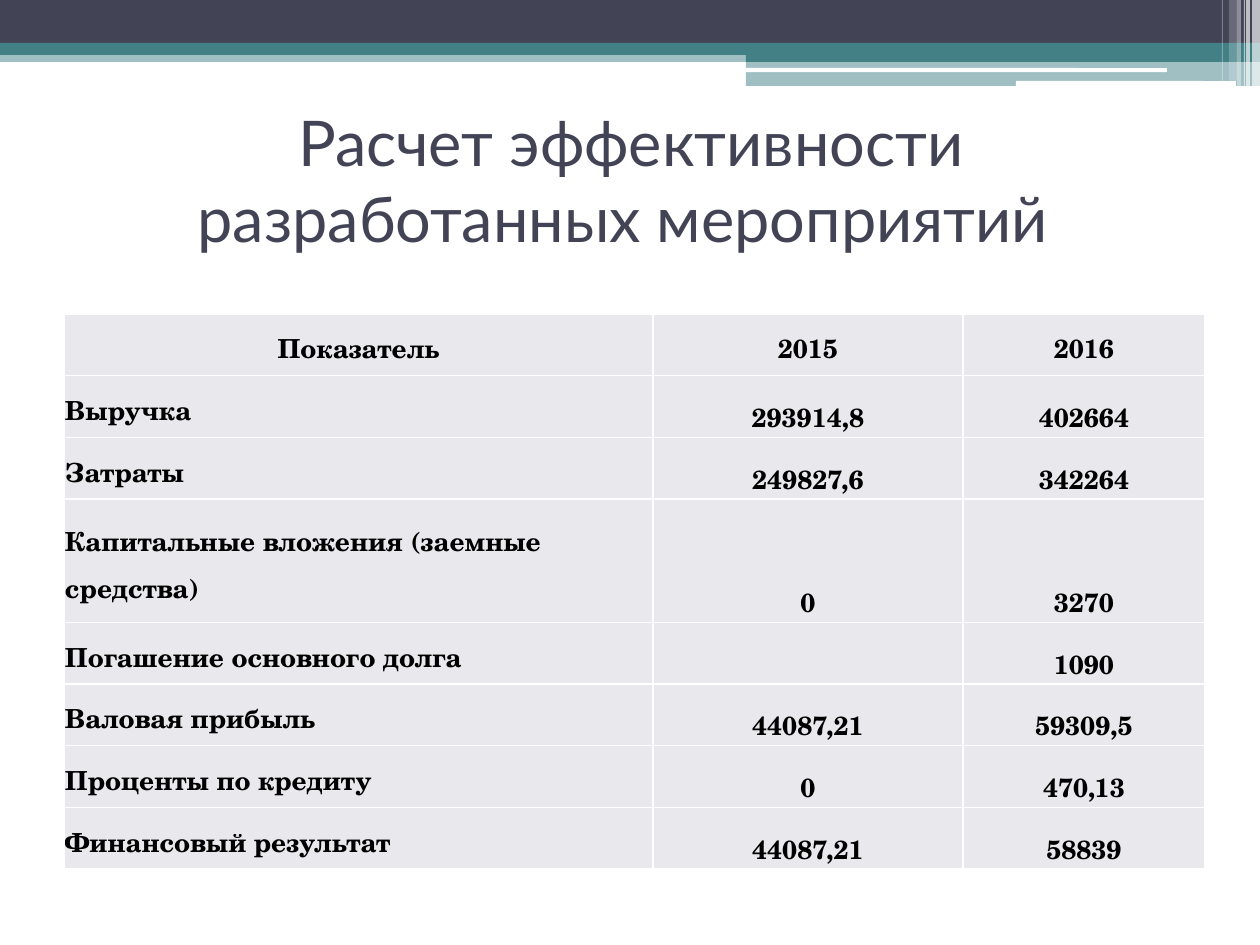
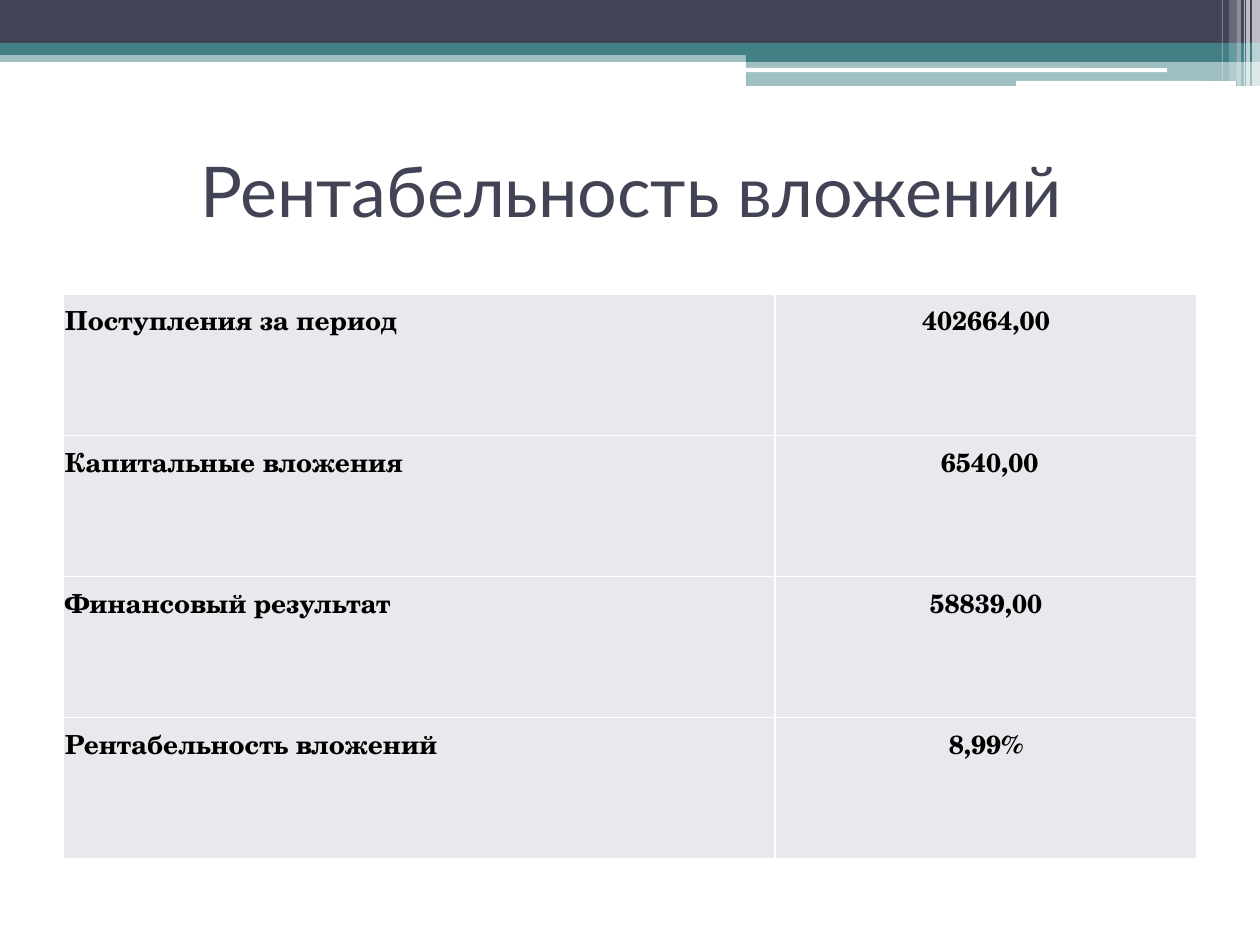
import lxml.etree
import pptx
import pptx.dml.color
import pptx.enum.shapes
import pptx.enum.text
import pptx.oxml.ns
import pptx.util

SCALE = pptx.util.Inches(1) / 126
RECTANGLE = pptx.enum.shapes.MSO_SHAPE.RECTANGLE
ROUNDED = pptx.enum.shapes.MSO_SHAPE.ROUNDED_RECTANGLE
ANCHOR = pptx.enum.text.MSO_ANCHOR
ALIGN = pptx.enum.text.PP_ALIGN


def px(length):
    return round(length * SCALE)


def color(value):
    return pptx.dml.color.RGBColor.from_string(value)


def add_child(parent, tag, **attributes):
    return lxml.etree.SubElement(parent, pptx.oxml.ns.qn(tag), **attributes)


class Deck:
    """Holds the shared style and draws elements on the current slide."""

    DARK = "424456"
    TEAL = "438086"
    WHITE = "FFFFFF"
    BLACK = "000000"
    CELL = "E9E9ED"
    TITLE_FONT = "Lato"
    TABLE_FONT = "TeX Gyre Schola"

    def __init__(self):
        self.presentation = pptx.Presentation()
        self.presentation.slide_width = px(1260)
        self.presentation.slide_height = px(945)
        self.slide = None

    def add_slide(self):
        self.slide = self.presentation.slides.add_slide(self.presentation.slide_layouts[6])
        self.add_header()

    def add_bar(self, left, top, width, height, fill, opacity=100, kind=RECTANGLE):
        shape = self.slide.shapes.add_shape(kind, px(left), px(top), px(width), px(height))
        shape.shadow.inherit = False
        shape.line.fill.background()
        shape.fill.solid()
        shape.fill.fore_color.rgb = color(fill)
        if opacity < 100:
            fill_color = shape.fill._xPr.find(".//" + pptx.oxml.ns.qn("a:srgbClr"))
            add_child(fill_color, "a:alpha", val=str(opacity * 1000))

    def add_header(self):
        self.add_bar(0, 50, 1260, 12, self.TEAL, 50)
        self.add_bar(0, 0, 1260, 43, self.DARK)
        self.add_bar(0, 43, 1260, 12, self.TEAL)
        self.add_bar(746, 49, 514, 13, self.TEAL)
        self.add_bar(746, 61, 514, 25, self.TEAL, 50)
        self.add_bar(745, 68, 422, 4, self.WHITE, kind=ROUNDED)
        self.add_bar(1016, 81, 220, 5, self.WHITE, kind=ROUNDED)
        stripes = [
            (1252, 8, 86, 65), (1246, 4, 86, 65), (1244, 1, 86, 60),
            (1237, 4, 86, 40), (1229, 8, 81, 20), (1222, 1, 81, 30),
        ]
        for left, width, height, opacity in stripes:
            self.add_bar(left, 0, width, height, self.WHITE, opacity)

    def format_paragraph(self, paragraph, font_name, size, fill, align, bold=False):
        paragraph.alignment = align
        for run in paragraph.runs:
            run.font.name = font_name
            run.font.size = pptx.util.Pt(size)
            run.font.bold = bold
            run.font.color.rgb = color(fill)

    def add_title(self, text, top, size):
        shape = self.slide.shapes.add_textbox(px(64), px(top), px(1134), px(147))
        text_frame = shape.text_frame
        text_frame.word_wrap = True
        text_frame.vertical_anchor = ANCHOR.MIDDLE
        text_frame.text = text
        self.format_paragraph(text_frame.paragraphs[0], self.TITLE_FONT, size, self.DARK, ALIGN.CENTER)

    def add_table(self, rows, left, top, height, column_widths, row_weights, margins, values_low):
        shape = self.slide.shapes.add_table(
            len(rows), len(column_widths), px(left), px(top), px(sum(column_widths)), px(height))
        table = shape.table
        table.first_row = table.horz_banding = False
        for column, width in zip(table.columns, column_widths):
            column.width = px(width)
        for row, weight in zip(table.rows, row_weights):
            row.height = px(height * weight / sum(row_weights))
        for row_index, row in enumerate(rows):
            for column_index, text in enumerate(row):
                cell = table.cell(row_index, column_index)
                is_value = column_index > 0
                is_header = values_low and row_index == 0
                self.format_cell(cell, text, margins, is_value or is_header)
                if values_low:
                    cell.vertical_anchor = ANCHOR.MIDDLE
                    if is_value and not is_header:
                        cell.vertical_anchor = ANCHOR.BOTTOM
                        cell.text_frame.paragraphs[0].space_after = pptx.util.Pt(10)

    def format_cell(self, cell, text, margins, centered):
        cell.margin_left, cell.margin_top, cell.margin_right, cell.margin_bottom = map(px, margins)
        properties = cell._tc.get_or_add_tcPr()
        for side in ("L", "R", "T", "B"):
            border = add_child(properties, f"a:ln{side}", w=str(pptx.util.Pt(1)))
            add_child(add_child(border, "a:solidFill"), "a:srgbClr", val=self.WHITE)
        cell.fill.solid()
        cell.fill.fore_color.rgb = color(self.CELL)
        cell.text_frame.text = text
        paragraph = cell.text_frame.paragraphs[0]
        paragraph.line_spacing = 1.15
        align = ALIGN.CENTER if centered else ALIGN.LEFT
        self.format_paragraph(paragraph, self.TABLE_FONT, 15, self.BLACK, align, bold=True)


def main():
    deck = Deck()

    deck.add_slide()
    deck.add_title("Расчет эффективности разработанных мероприятий ", 106, 36)
    efficiency = [
        ("Показатель", "2015", "2016"),
        ("Выручка", "293914,8", "402664"),
        ("Затраты", "249827,6", "342264"),
        ("Капитальные вложения (заемные средства)", "0", "3270"),
        ("Погашение основного долга", "", "1090"),
        ("Валовая прибыль", "44087,21", "59309,5"),
        ("Проценты по кредиту", "0", "470,13"),
        ("Финансовый результат", "44087,21", "58839"),
    ]
    deck.add_table(efficiency, 64, 314, 555, (589, 310, 242), (1, 1, 1, 2, 1, 1, 1, 1),
                   margins=(1, 1, 1, 0), values_low=True)

    deck.add_slide()
    deck.add_title("Рентабельность вложений", 116, 40)
    profitability = [
        ("Поступления за период", "402664,00"),
        ("Капитальные вложения", " 6540,00"),
        ("Финансовый результат", "58839,00"),
        ("Рентабельность вложений", "8,99%"),
    ]
    deck.add_table(profitability, 63, 294, 565, (712, 422), (1, 1, 1, 1),
                   margins=(2, 0, 2, 0), values_low=False)

    deck.presentation.save("out.pptx")


if __name__ == "__main__":
    main()
